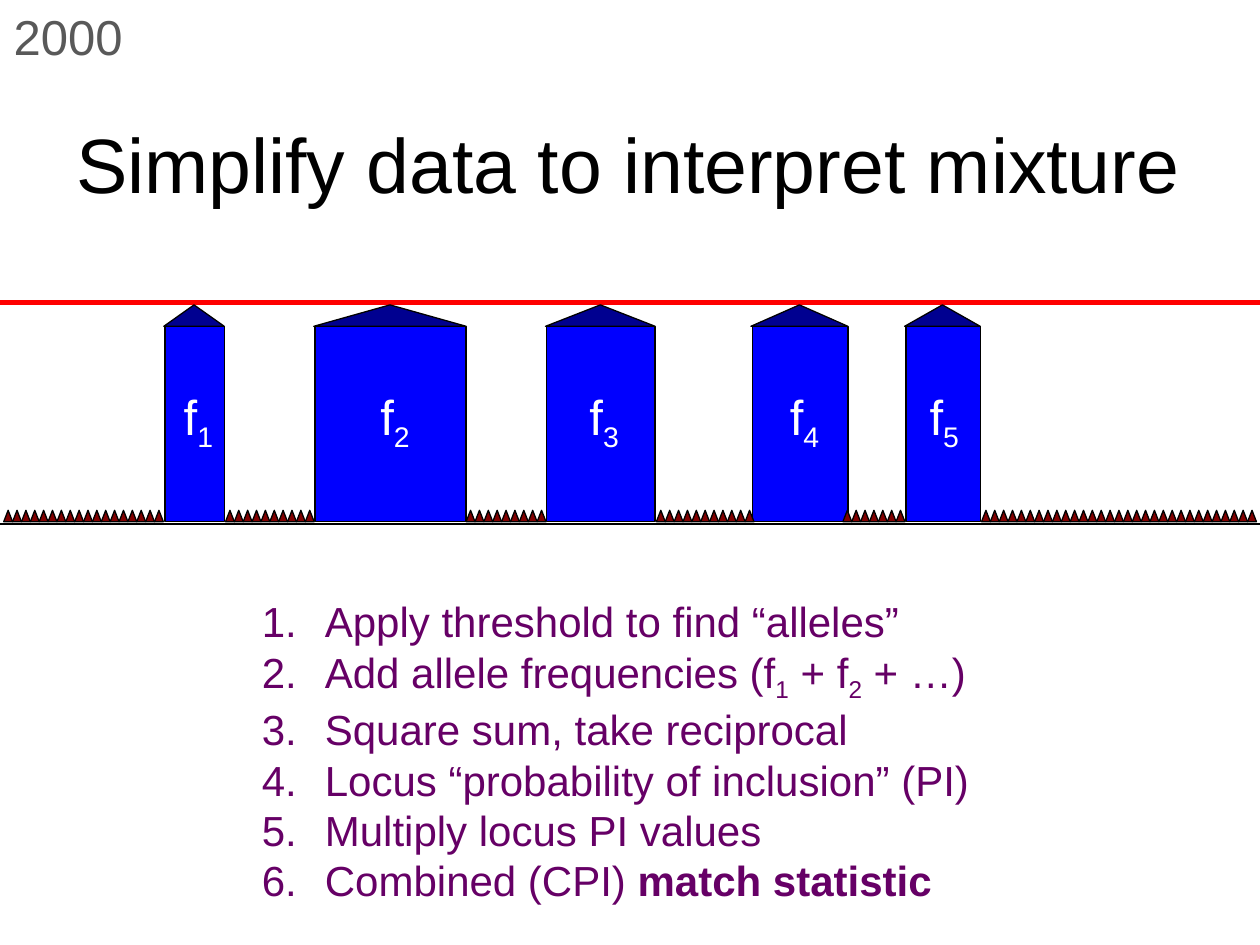
from lxml import etree
from pptx import Presentation
from pptx.dml.color import RGBColor
from pptx.enum.shapes import MSO_CONNECTOR, MSO_SHAPE
from pptx.enum.text import MSO_ANCHOR, MSO_AUTO_SIZE, PP_ALIGN
from pptx.oxml.ns import qn
from pptx.util import Inches, Pt

# Content: a run is (text, style), style being "", "sub" or "bold"
TITLE = "Simplify data to interpret mixture"
YEAR = "2000"
STEPS = [
    [("Apply threshold to find “alleles”", "")],
    [("Add allele frequencies (f", ""), ("1", "sub"), (" + f", ""),
     ("2", "sub"), (" + …)", "")],
    [("Square sum, take reciprocal", "")],
    [("Locus “probability of inclusion” (PI)", "")],
    [("Multiply locus PI values", "")],
    [("Combined (CPI) ", ""), ("match statistic", "bold")],
]
# Allele peaks: left, width, label left
PEAKS = [(1.31, 0.47, 1.19), (2.5, 1.2, 2.75), (4.34, 0.86, 4.41),
         (5.97, 0.76, 6.0), (7.19, 0.59, 7.11)]
# Noise between the peaks: left, number of spikes
NOISE = [(0.03, 18), (1.79, 10), (3.7, 9), (5.21, 11), (6.69, 7), (7.79, 31)]

THEME = {
    "font": "Arial", "title": 44, "label": 28, "step": 24, "edge": 0.75,
    "black": "000000", "grey": "595959", "purple": "660066", "white": "FFFFFF",
    "red": "FF0000", "bar": "0000FF", "cap": "000090", "noise": "800000",
}
THRESHOLD_Y, CAP_Y, BAR_Y, NOISE_Y, BASE_Y = 2.4, 2.42, 2.59, 4.05, 4.16
BAR_H, NOISE_W, NOISE_H, NOISE_STEP = 1.55, 0.07, 0.09, 0.0704


def color(name):
    return RGBColor.from_string(THEME[name])


def write(tf, paragraphs, size, fill, align=None, wrap=True, numbered=False):
    tf.word_wrap = wrap
    for i, runs in enumerate(paragraphs):
        p = tf.add_paragraph() if i else tf.paragraphs[0]
        p.alignment = align
        for text, style in runs:
            r = p.add_run()
            r.text = text
            r.font.name, r.font.size = THEME["font"], Pt(THEME[size])
            r.font.color.rgb = color(fill)
            if style == "bold":
                r.font.bold = True
            elif style == "sub":
                r.font._element.set("baseline", "-25000")
        if numbered:
            pPr = p._p.get_or_add_pPr()
            pPr.set("marL", str(Inches(0.5)))
            pPr.set("indent", str(Inches(-0.5)))
            etree.SubElement(pPr, qn("a:buFont"), typeface="+mj-lt")
            etree.SubElement(pPr, qn("a:buAutoNum"), type="arabicPeriod")


def add_text(slide, box, paragraphs, **fmt):
    tf = slide.shapes.add_textbox(*map(Inches, box)).text_frame
    write(tf, paragraphs, **fmt)
    tf.auto_size = MSO_AUTO_SIZE.SHAPE_TO_FIT_TEXT


def add_block(slide, kind, box, fill):
    s = slide.shapes.add_shape(kind, *map(Inches, box))
    s.shadow.inherit = False
    s.fill.solid()
    s.fill.fore_color.rgb = color(fill)
    s.line.color.rgb = color("black")
    s.line.width = Pt(THEME["edge"])


def add_rule(slide, y, fill, width):
    s = slide.shapes.add_connector(MSO_CONNECTOR.STRAIGHT, Inches(10), Inches(y),
                                   Inches(0), Inches(y))
    s.line.color.rgb = color(fill)
    s.line.width = Pt(width)
    etree.SubElement(s._element.spPr, qn("a:effectLst"))


def main():
    prs = Presentation()
    prs.slide_width, prs.slide_height = Inches(10), Inches(7.5)
    slide = prs.slides.add_slide(prs.slide_layouts[5])

    # Title, year and numbered steps
    title = slide.shapes.title
    title.left, title.top, title.width, title.height = map(
        Inches, (0.46, 0.67, 9.06, 1.25))
    tf = title.text_frame
    tf.auto_size = MSO_AUTO_SIZE.NONE
    tf.vertical_anchor = MSO_ANCHOR.MIDDLE
    write(tf, [[(TITLE, "")]], size="title", fill="black", align=PP_ALIGN.CENTER)
    add_text(slide, (0, 0, 1.08, 0.57), [[(YEAR, "")]], size="label",
             fill="grey", align=PP_ALIGN.CENTER, wrap=False)
    add_text(slide, (1.98, 4.68, 6.31, 2.52), STEPS, size="step",
             fill="purple", numbered=True)

    # Threshold, bars, baseline and caps
    add_rule(slide, THRESHOLD_Y, "red", 3)
    for left, width, _ in PEAKS:
        add_block(slide, MSO_SHAPE.RECTANGLE, (left, BAR_Y, width, BAR_H), "bar")
    add_rule(slide, BASE_Y, "black", 1.5)
    for left, width, _ in PEAKS:
        add_block(slide, MSO_SHAPE.ISOSCELES_TRIANGLE,
                  (left - 0.01, CAP_Y, width + 0.01, BAR_Y - CAP_Y), "cap")

    # Background noise
    for left, count in NOISE:
        for i in range(count):
            add_block(slide, MSO_SHAPE.ISOSCELES_TRIANGLE,
                      (left + i * NOISE_STEP, NOISE_Y, NOISE_W, NOISE_H), "noise")

    # Frequency labels
    for n, (_, _, left) in enumerate(PEAKS, 1):
        add_text(slide, (left, 3.02, 0.77, 0.57), [[("f", ""), (str(n), "sub")]],
                 size="label", fill="white", align=PP_ALIGN.CENTER)

    prs.save("out.pptx")


if __name__ == "__main__":
    main()
